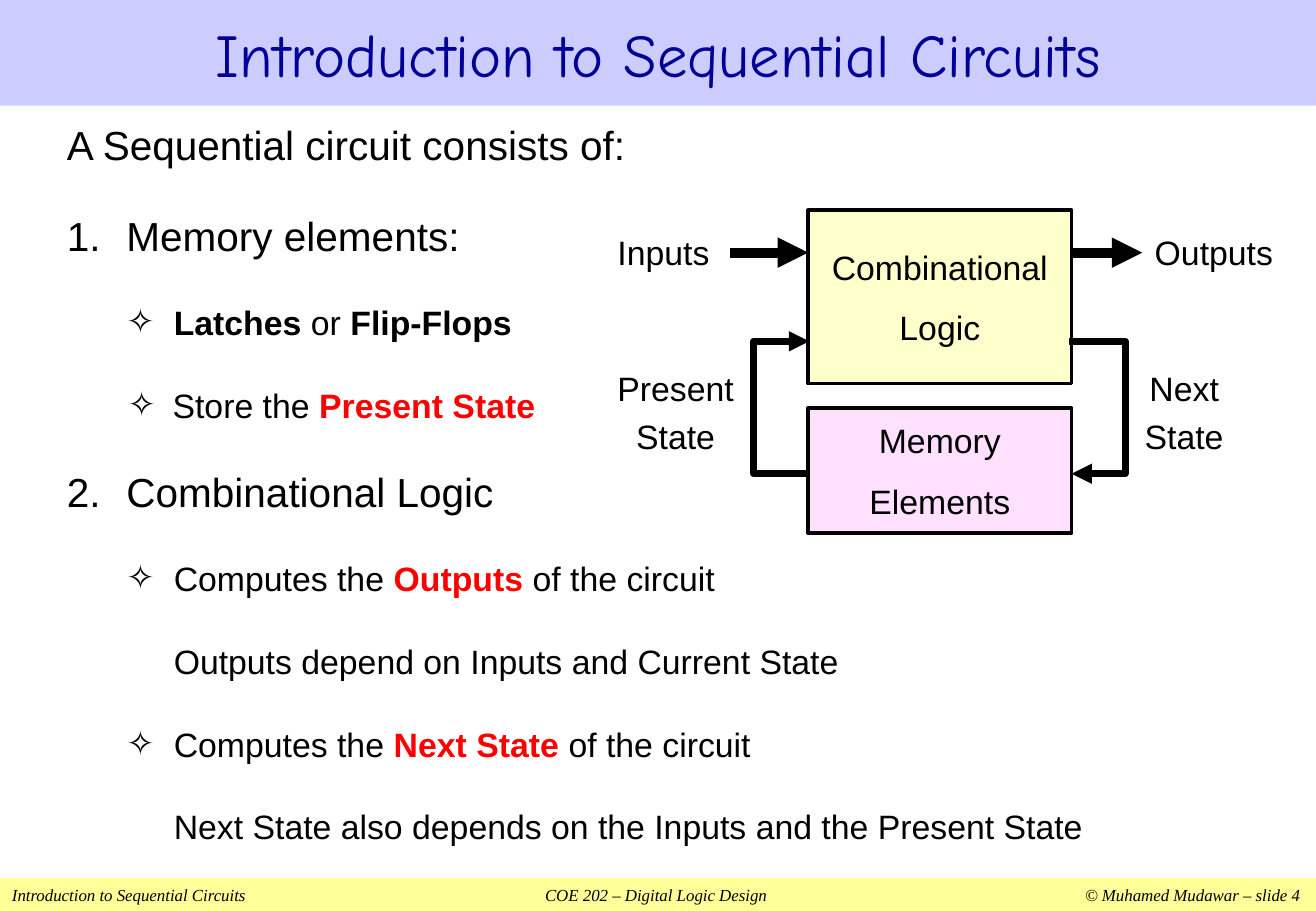
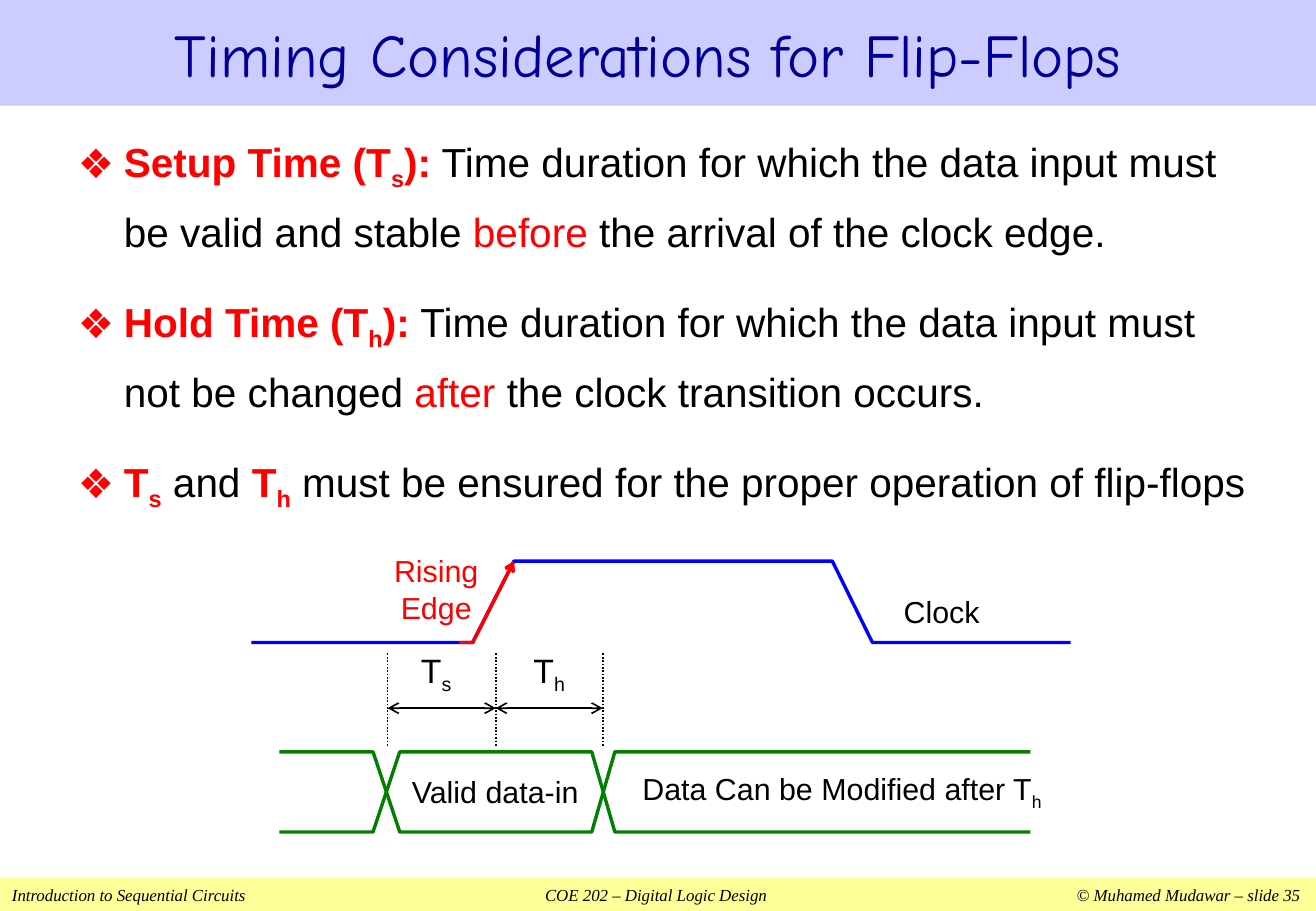
from lxml.etree import SubElement
from pptx import Presentation
from pptx.dml.color import RGBColor
from pptx.enum.dml import MSO_LINE
from pptx.enum.shapes import MSO_CONNECTOR, MSO_SHAPE
from pptx.enum.text import MSO_ANCHOR, MSO_AUTO_SIZE, PP_ALIGN
from pptx.oxml.ns import qn
from pptx.util import Inches, Pt

BLACK = RGBColor(0, 0, 0)
RED = RGBColor(0xFF, 0, 0)
BLUE = RGBColor(0, 0, 0xFF)
GREEN = RGBColor(0, 0x80, 0)
NAVY = RGBColor(0, 0, 0x99)
LAVENDER = RGBColor(0xCC, 0xCC, 0xFF)
PALE_YELLOW = RGBColor(0xFF, 0xFF, 0x99)
CREAM = RGBColor(0xFF, 0xFF, 0xCC)
PINK = RGBColor(0xFF, 0xE1, 0xFF)
WHITE = RGBColor(0xFF, 0xFF, 0xFF)

SLIDE_W, SLIDE_H = 10.83, 7.5
TITLE_H, FOOTER_H = 0.87, 0.27


def write_runs(p, runs, size):
    """Add (text, flags) runs; flags: b = bold, r = red, s = subscript."""
    for text, flags in runs:
        r = p.add_run()
        r.text = text
        r.font.name = "Arial"
        r.font.size = Pt(size)
        r.font.bold = "b" in flags
        r.font.color.rgb = RED if "r" in flags else BLACK
        if "s" in flags:
            r.font._element.set("baseline", "-25000")


prs = Presentation()
prs.slide_width, prs.slide_height = Inches(SLIDE_W), Inches(SLIDE_H)

# Body paragraphs: level, left margin, hanging indent, bullet, runs
circuit_body = [
    (0, 0, 0, None, [("A Sequential circuit consists of:", "")]),
    (0, 0.49, 0.49, "auto", [("Memory elements:", "")]),
    (1, 0.88, 0.39, "✧", [("Latches", "b"), (" or ", ""), ("Flip-Flops", "b")]),
    (1, 0.87, 0.37, "✧", [("Store the ", ""), ("Present State", "br")]),
    (0, 0.49, 0.49, "auto", [("Combinational Logic", "")]),
    (1, 0.88, 0.39, "✧",
     [("Computes the ", ""), ("Outputs", "br"), (" of the circuit", "")]),
    (1, 0.88, 0, None, [("Outputs depend on Inputs and Current State", "")]),
    (1, 0.88, 0.39, "✧",
     [("Computes the ", ""), ("Next State", "br"), (" of the circuit", "")]),
    (1, 0.88, 0, None,
     [("Next State also depends on the Inputs and the Present State", "")]),
]
timing_body = [(0, 0.38, 0.38, "❖", runs) for runs in (
    [("Setup Time (T", "br"), ("s", "brs"), ("):", "br"),
     (" Time duration for which the data input must be valid and stable ", ""),
     ("before", "r"), (" the arrival of the clock edge.", "")],
    [("Hold Time (T", "br"), ("h", "brs"), ("):", "br"),
     (" Time duration for which the data input must not be changed ", ""),
     ("after", "r"), (" the clock transition occurs.", "")],
    [("T", "br"), ("s", "brs"), (" and ", ""), ("T", "br"), ("h", "brs"),
     (" must be ensured for the proper operation of flip-flops", "")],
)]

# Title, slide number, body box, space before, line spacing, paragraphs
pages = [
    ("Introduction to Sequential Circuits", 4,
     (0.45, 0.94, 9.6, 6.15), 25, 1.0, circuit_body),
    ("Timing Considerations for Flip-Flops ", 35,
     (0.54, 0.94, 9.94, 3.3), 15, 1.3, timing_body),
]
for title, number, body_box, before, spacing, paragraphs in pages:
    slide = prs.slides.add_slide(prs.slide_layouts[1])

    footer = slide.shapes.add_shape(
        MSO_SHAPE.RECTANGLE, 0, Inches(SLIDE_H - FOOTER_H), Inches(SLIDE_W), Inches(FOOTER_H))
    footer.shadow.inherit = False
    footer.fill.solid()
    footer.fill.fore_color.rgb = PALE_YELLOW
    footer.line.fill.background()
    p = footer.text_frame.paragraphs[0]
    p.text = ("Introduction to Sequential Circuits\tCOE 202 – Digital Logic Design"
              f"\t© Muhamed Mudawar – slide {number}")
    p.alignment = PP_ALIGN.LEFT
    font = p.runs[0].font
    font.name, font.size, font.italic = "Times New Roman", Pt(10), True
    font.color.rgb = BLACK
    tabs = SubElement(p._p.get_or_add_pPr(), qn("a:tabLst"))
    for pos, align in ((5.3, "ctr"), (10.6, "r")):
        SubElement(tabs, qn("a:tab"), pos=str(Inches(pos)), algn=align)

    sp = slide.shapes.title
    sp.left, sp.top, sp.width, sp.height = 0, 0, Inches(SLIDE_W), Inches(TITLE_H)
    sp.fill.solid()
    sp.fill.fore_color.rgb = LAVENDER
    tf = sp.text_frame
    tf.text = title
    tf.auto_size = MSO_AUTO_SIZE.NONE
    tf.vertical_anchor = MSO_ANCHOR.MIDDLE
    tf.paragraphs[0].alignment = PP_ALIGN.CENTER
    font = tf.paragraphs[0].runs[0].font
    font.name, font.size = "Comic Neue", Pt(36)
    font.color.rgb = NAVY

    body = slide.placeholders[1]
    body.left, body.top, body.width, body.height = map(Inches, body_box)
    tf = body.text_frame
    tf.auto_size = MSO_AUTO_SIZE.NONE
    for i, (level, margin, hanging, bullet, runs) in enumerate(paragraphs):
        p = tf.add_paragraph() if i else tf.paragraphs[0]
        p.level = level
        p.space_before, p.line_spacing = Pt(before), spacing
        pPr = p._p.get_or_add_pPr()
        pPr.set("marL", str(Inches(margin)))
        pPr.set("indent", str(-Inches(hanging)))
        if bullet is None:
            SubElement(pPr, qn("a:buNone"))
        elif bullet == "auto":
            SubElement(pPr, qn("a:buAutoNum"), type="arabicPeriod")
        else:
            SubElement(pPr, qn("a:buChar"), char=bullet)
        write_runs(p, runs, 20 if level else 24)

circuit, timing = prs.slides

# Slide, box, fill, outlined, size, spacing of first and later lines, lines
labels = [
    (circuit, (6.65, 1.73, 2.17, 1.43), CREAM, True, 20, (1, 1.5),
     [[("Combinational", "")], [("Logic", "")]]),
    (circuit, (6.65, 3.36, 2.17, 1.03), PINK, True, 20, (1, 1.5),
     [[("Memory", "")], [("Elements", "")]]),
    (circuit, (4.97, 1.83, 0.98, 0.49), None, False, 20, (1, 1), [[("Inputs", "")]]),
    (circuit, (9.5, 1.83, 0.98, 0.49), None, False, 20, (1, 1), [[("Outputs", "")]]),
    (circuit, (9.35, 2.96, 0.79, 0.8), None, False, 20, (1.2, 1.2),
     [[("Next", "")], [("State", "")]]),
    (circuit, (5.02, 2.96, 1.08, 0.8), None, False, 20, (1.2, 1.2),
     [[("Present", "")], [("State", "")]]),
    (timing, (3.35, 6.3, 1.45, 0.43), WHITE, False, 18, (1, 1), [[("Valid data-in", "")]]),
    (timing, (5.11, 6.3, 3.64, 0.43), WHITE, False, 18, (1, 1),
     [[("Data Can be Modified after T", ""), ("h", "s")]]),
    (timing, (7.25, 4.84, 1, 0.39), None, False, 18, (1, 1), [[("Clock", "")]]),
    (timing, (3.1, 4.53, 0.98, 0.64), None, False, 18, (1, 1),
     [[("Rising", "r")], [("Edge", "r")]]),
    (timing, (3.34, 5.34, 0.5, 0.39), None, False, 20, (1, 1), [[("T", ""), ("s", "s")]]),
    (timing, (4.27, 5.34, 0.5, 0.39), None, False, 20, (1, 1), [[("T", ""), ("h", "s")]]),
]
for slide, box, fill, outlined, size, spacings, lines in labels:
    box = [Inches(v) for v in box]
    if fill is None:
        sp = slide.shapes.add_textbox(*box)
    else:
        sp = slide.shapes.add_shape(MSO_SHAPE.RECTANGLE, *box)
        sp.shadow.inherit = False
        sp.fill.solid()
        sp.fill.fore_color.rgb = fill
        if outlined:
            sp.line.color.rgb, sp.line.width = BLACK, Pt(2)
        else:
            sp.line.fill.background()
    tf = sp.text_frame
    tf.word_wrap = True
    tf.vertical_anchor = MSO_ANCHOR.MIDDLE
    tf.margin_left = tf.margin_top = tf.margin_right = tf.margin_bottom = 0
    for i, runs in enumerate(lines):
        p = tf.add_paragraph() if i else tf.paragraphs[0]
        p.alignment = PP_ALIGN.CENTER
        p.line_spacing = float(spacings[min(i, 1)])
        write_runs(p, runs, size)

# Slide, points, colour, width, head, tail, dash
clock_low, clock_high = 5.29, 4.62
data_high, data_low = 6.19, 6.85
setup_x, edge_x, hold_x = 3.19, 4.08, 4.96
strokes = [
    (circuit, [(8.82, 3.9), (9.26, 3.9), (9.26, 2.81), (8.8, 2.81)],
     BLACK, 4, "triangle", None, None),
    (circuit, [(6.64, 3.9), (6.2, 3.9), (6.2, 2.81), (6.66, 2.81)],
     BLACK, 4, None, "triangle", None),
    (circuit, [(6.01, 2.08), (6.65, 2.08)], BLACK, 6, None, "triangle", None),
    (circuit, [(8.81, 2.08), (9.4, 2.08)], BLACK, 6, None, "triangle", None),
    (timing, [(2.07, clock_low), (3.89, clock_low), (4.23, clock_high),
              (6.85, clock_high), (7.18, clock_low), (8.81, clock_low)],
     BLUE, 2, None, None, None),
    (timing, [(3.78, clock_low), (3.89, clock_low), (4.23, clock_high)],
     RED, 2, None, "arrow", None),
]
for x in (setup_x, edge_x, hold_x):
    strokes.append((timing, [(x, 5.38), (x, 6.15)], BLACK, 1, None, None, MSO_LINE.ROUND_DOT))
for x1, x2 in ((setup_x, edge_x), (edge_x, hold_x)):
    strokes.append((timing, [(x1, 5.83), (x2, 5.83)], BLACK, 1, "arrow", "arrow", None))
for a, b in ((data_high, data_low), (data_low, data_high)):
    strokes.append((timing, [(2.3, a), (3.07, a), (3.29, b), (4.87, b), (5.06, a), (8.48, a)],
                    GREEN, 2, None, None, None))

for slide, points, color, width, head, tail, dash in strokes:
    points = [(Inches(x), Inches(y)) for x, y in points]
    if len(points) == 2:
        sp = slide.shapes.add_connector(MSO_CONNECTOR.STRAIGHT, *points[0], *points[1])
    else:
        builder = slide.shapes.build_freeform(*points[0])
        builder.add_line_segments(points[1:], close=False)
        sp = builder.convert_to_shape()
        sp.fill.background()
    sp.line.color.rgb, sp.line.width = color, Pt(width)
    if dash:
        sp.line.dash_style = dash
    spPr = sp.element.spPr
    ln = spPr.find(qn("a:ln"))
    for tag, arrow in (("a:headEnd", head), ("a:tailEnd", tail)):
        if arrow:
            SubElement(ln, qn(tag), type=arrow)
    SubElement(spPr, qn("a:effectLst"))

prs.save("out.pptx")
